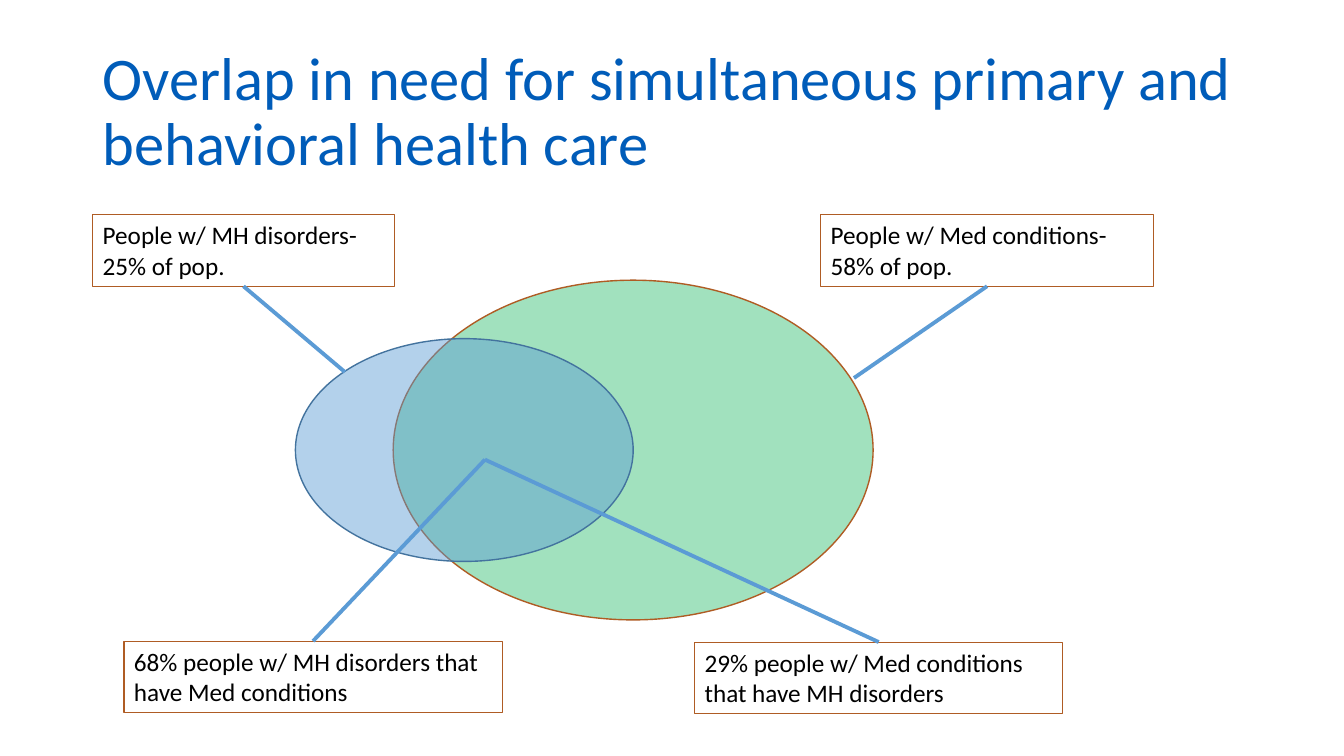
from dataclasses import dataclass

from lxml.etree import SubElement
from pptx import Presentation
from pptx.dml.color import RGBColor
from pptx.enum.shapes import MSO_CONNECTOR, MSO_SHAPE
from pptx.enum.text import MSO_ANCHOR, PP_ALIGN
from pptx.oxml.ns import qn
from pptx.util import Inches, Pt


@dataclass(frozen=True)
class Theme:
    """Hold the colours, font and type sizes."""
    font: str = "Calibri"
    title: str = "005CB9"
    ink: str = "000000"
    green: str = "00B050"
    blue: str = "5B9BD5"
    navy: str = "43739E"
    rust: str = "AF5C24"
    big: float = 43.2
    body: float = 18


THEME = Theme()


def write(shape, text, size=THEME.body, color=THEME.ink, anchor=MSO_ANCHOR.TOP, space=None):
    """Put wrapped, left-aligned text in a shape."""
    frame = shape.text_frame
    frame.word_wrap = True
    frame.vertical_anchor = anchor
    para = frame.paragraphs[0]
    para.alignment = PP_ALIGN.LEFT
    para.line_spacing = space
    run = para.add_run()
    run.text = text
    run.font.name = THEME.font
    run.font.size = Pt(size)
    run.font.color.rgb = RGBColor.from_string(color)


def add_form(slide, kind, box, edge, width):
    """Add an outlined shape without shadow."""
    shape = slide.shapes.add_shape(kind, *map(Inches, box))
    shape.shadow.inherit = False
    shape.line.color.rgb = RGBColor.from_string(edge)
    shape.line.width = Pt(width)
    return shape


def add_oval(slide, box, color, alpha, edge):
    """Add a see-through ellipse with opacity in percent."""
    oval = add_form(slide, MSO_SHAPE.OVAL, box, edge, 1)
    oval.fill.solid()
    oval.fill.fore_color.rgb = RGBColor.from_string(color)
    tint = oval.fill._xPr.find(qn("a:solidFill"))[0]
    SubElement(tint, qn("a:alpha")).set("val", str(alpha * 1000))


def add_label(slide, text, box, site, tip):
    """Add a boxed label and a line from its side to a tip."""
    label = add_form(slide, MSO_SHAPE.RECTANGLE, box, THEME.rust, 0.75)
    label.fill.background()
    write(label, text)
    end = [Inches(v) for v in tip]
    line = slide.shapes.add_connector(MSO_CONNECTOR.STRAIGHT, *end, *end)
    line.begin_connect(label, site)
    line.line.color.rgb = RGBColor.from_string(THEME.blue)
    line.line.width = Pt(2.75)
    SubElement(line._element.spPr, qn("a:effectLst"))


def main():
    """Build the slide and save it."""
    deck = Presentation()
    deck.slide_width, deck.slide_height = Inches(13.33), Inches(7.5)
    slide = deck.slides.add_slide(deck.slide_layouts[6])

    title = slide.shapes.add_textbox(*map(Inches, (0.92, 0.4, 11.5, 1.45)))
    write(title, "Overlap in need for simultaneous primary and behavioral health care",
          size=THEME.big, color=THEME.title, anchor=MSO_ANCHOR.MIDDLE, space=0.9)

    add_oval(slide, (3.9, 2.78, 4.76, 3.37), THEME.green, 37, THEME.rust)
    add_oval(slide, (2.93, 3.36, 3.35, 2.21), THEME.blue, 46, THEME.navy)

    top, bottom, high = 0, 2, 0.71
    shared = (4.81, 4.56)
    labels = [
        ("People w/ MH disorders- 25% of pop.", (0.92, 2.13, 2.99, high), bottom, (3.42, 3.69)),
        ("68% people w/ MH disorders that have Med conditions", (1.23, 6.36, 3.75, high), top, shared),
        ("People w/ Med conditions- 58% of pop.", (8.14, 2.13, 3.3, high), bottom, (8.47, 3.75)),
        ("29% people w/ Med conditions that have MH disorders", (6.89, 6.37, 3.65, high), top, shared),
    ]
    for label in labels:
        add_label(slide, *label)
    deck.save("out.pptx")


if __name__ == "__main__":
    main()
